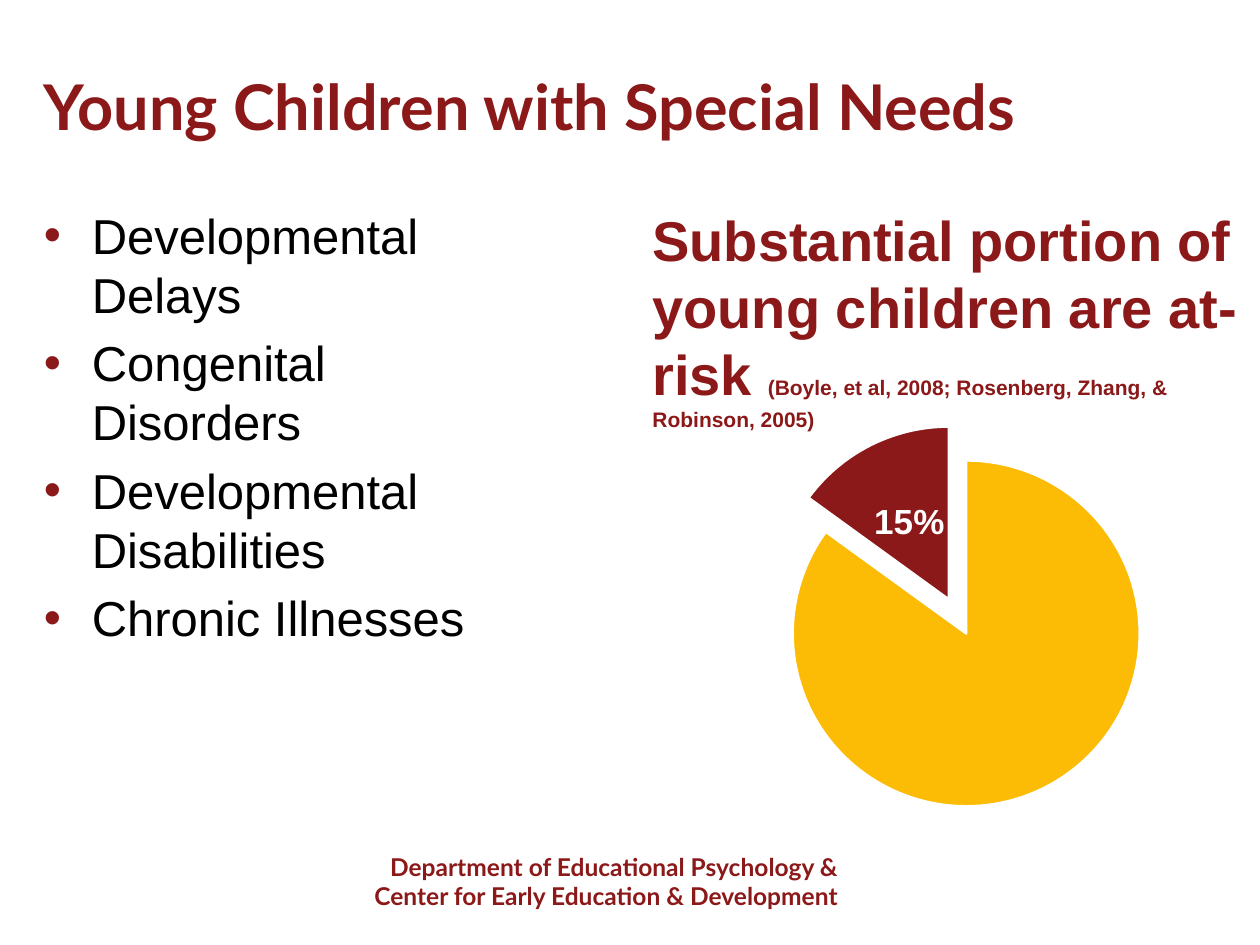
from lxml import etree
from pptx import Presentation
from pptx import util as u
from pptx.chart import data as chart_data
from pptx.dml.color import RGBColor
from pptx.enum import chart as charts, text
from pptx.oxml import ns

COLORS = {"maroon": "8C1919", "gold": "FCBB04", "black": "000000", "white": "FFFFFF"}
NEEDS = ["Developmental Delays", "Congenital Disorders",
         "Developmental Disabilities", "Chronic Illnesses"]


def color(name):
    return RGBColor.from_string(COLORS[name])


def add_child(parent, tag, **attributes):
    return etree.SubElement(parent, ns.qn(tag), attributes)


def style_font(font, size, name="Arial", tint="maroon", bold=True):
    font.size, font.name, font.bold = u.Pt(size), name, bold
    font.color.rgb = color(tint)


def add_box(page, left, top, width, height, anchor=text.MSO_ANCHOR.TOP):
    box = page.shapes.add_textbox(*map(u.Inches, (left, top, width, height)))
    box.text_frame.word_wrap = True
    box.text_frame.vertical_anchor = anchor
    return box.text_frame


def next_para(frame, index):
    return frame.add_paragraph() if index else frame.paragraphs[0]


def add_span(para, words, size, **style):
    span = para.add_run()
    span.text = words
    style_font(span.font, size, **style)


def add_bullets(frame, items):
    for index, item in enumerate(items):
        para = next_para(frame, index)
        props = para._p.get_or_add_pPr()
        props.set("marL", str(u.Inches(0.38)))
        props.set("indent", str(u.Inches(-0.38)))
        tint = add_child(props, "a:buClr")
        add_child(tint, "a:srgbClr", val=COLORS["maroon"])
        add_child(props, "a:buFont", typeface="Arial")
        add_child(props, "a:buChar", char="•")
        if index:
            para.space_before = u.Pt(5.6)
        add_span(para, item, 28, tint="black", bold=False)


def place_plot(chart, **fractions):
    """Fix the inner plot area as fractions of the chart frame."""
    area = chart._chartSpace.chart.plotArea
    for old in area.findall(ns.qn("c:layout")):
        area.remove(old)
    layout = etree.Element(ns.qn("c:layout"))
    area.insert(0, layout)
    manual = add_child(layout, "c:manualLayout")
    add_child(manual, "c:layoutTarget", val="inner")
    for mode in ("xMode", "yMode"):
        add_child(manual, "c:" + mode, val="edge")
    for key, value in fractions.items():
        add_child(manual, "c:" + key, val=str(value))


def add_pie(page):
    values = chart_data.CategoryChartData(number_format="0%")
    values.categories = ["1", "2"]
    values.add_series("Series 1", (0.85, 0.15))
    chart = page.shapes.add_chart(
        charts.XL_CHART_TYPE.PIE, *map(u.Inches, (5.5, 3.09, 4, 3.32)), values).chart
    chart.has_legend = chart.has_title = False
    style_font(chart.font, 10, tint="black", bold=False)
    place_plot(chart, x=0.18, y=0.13, w=0.69, h=0.83)

    # Slices, pulled apart
    series = chart.plots[0].series[0]
    for index, tint in enumerate(("gold", "maroon")):
        style = series.points[index].format
        style.fill.solid()
        style.fill.fore_color.rgb = color(tint)
        style.line.color.rgb = color("white")
        style.line.width = u.Pt(1.5)
    for point in series._element.findall(ns.qn("c:dPt")):
        explosion = etree.Element(ns.qn("c:explosion"), val="11")
        point.find(ns.qn("c:spPr")).addprevious(explosion)

    # Only the smaller slice keeps its label
    labels = series.data_labels
    labels.show_value = True
    labels.show_percentage = False
    labels.number_format, labels.number_format_is_linked = "0%", False
    labels.position = charts.XL_LABEL_POSITION.CENTER
    style_font(labels.font, 20, tint="white")
    hidden = etree.Element(ns.qn("c:dLbl"))
    add_child(hidden, "c:idx", val="0")
    add_child(hidden, "c:delete", val="1")
    labels._element.insert(0, hidden)


def main():
    deck = Presentation()
    deck.slide_width, deck.slide_height = u.Inches(10), u.Inches(7.5)
    page = deck.slides.add_slide(deck.slide_layouts[6])

    # Footer
    footer = add_box(page, 1.75, 6.71, 5, 0.57)
    for index, line in enumerate(("Department of Educational Psychology &",
                                  "Center for Early Education & Development")):
        para = next_para(footer, index)
        para.alignment = text.PP_ALIGN.RIGHT
        add_span(para, line, 14, name="Lato")

    # Title
    title = add_box(page, 0.25, 0.42, 9.5, 0.83, text.MSO_ANCHOR.MIDDLE)
    add_span(title.paragraphs[0], "Young Children with Special Needs", 36, name="Lato")

    # Pie with its heading
    add_pie(page)
    heading = add_box(page, 5.08, 1.58, 4.92, 1.99).paragraphs[0]
    add_span(heading, "Substantial portion of young children are at-risk ", 32)
    add_span(heading, "(Boyle, et al, 2008; Rosenberg, Zhang, & Robinson, 2005)", 12)

    # Bullet list
    add_bullets(add_box(page, 0.25, 1.58, 3.75, 4.83), NEEDS)

    deck.save("out.pptx")


if __name__ == "__main__":
    main()
